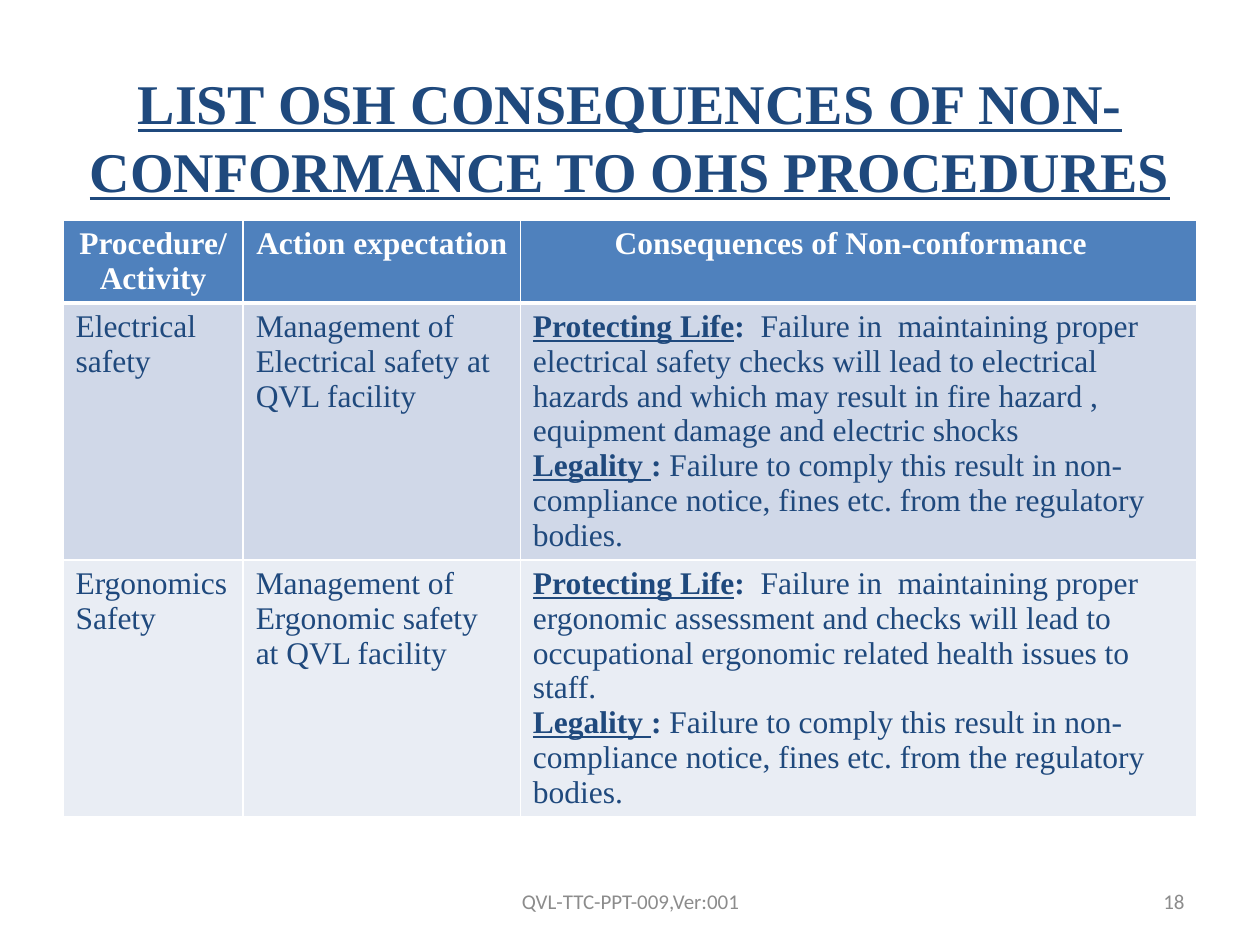
"""Build the slide on consequences of non-conformance to OHS procedures."""
from lxml.etree import SubElement
from pptx import Presentation
from pptx.dml.color import RGBColor
from pptx.enum.text import MSO_ANCHOR, MSO_AUTO_SIZE, PP_ALIGN
from pptx.oxml.ns import qn
from pptx.util import Inches, Pt

NAVY = RGBColor(0x1F, 0x49, 0x7D)
BLUE = RGBColor(0x4F, 0x81, 0xBD)
BANDS = [RGBColor(0xD0, 0xD8, 0xE8), RGBColor(0xE9, 0xED, 0xF4)]
WHITE = RGBColor(0xFF, 0xFF, 0xFF)
GREY = RGBColor(0x8C, 0x8C, 0x8C)
SERIF = "Times New Roman"

TITLE = "LIST OSH CONSEQUENCES OF NON-CONFORMANCE TO OHS PROCEDURES"
HEADERS = ["Procedure/Activity", "Action expectation ", "Consequences of Non-conformance  "]
LEGALITY = ("Legality ", "Failure to comply this result in non-compliance notice, "
            "fines etc. from the regulatory bodies.")
ROWS = [
    ("Electrical safety", "Management of Electrical safety at QVL facility",
     " Failure in  maintaining proper electrical safety checks will lead to electrical hazards "
     "and which may result in fire hazard , equipment damage and electric shocks"),
    ("Ergonomics Safety", "Management of Ergonomic safety at QVL facility",
     " Failure in  maintaining proper ergonomic assessment and checks will lead to "
     "occupational ergonomic related health issues to staff."),
]
COL_WIDTHS = [1.43, 2.2, 5.37]
ROW_HEIGHTS = [0.65, 2.04, 2.04]
FOOTERS = [
    ("18", 7.17, 2.33, PP_ALIGN.RIGHT),
    ("QVL-TTC-PPT-009,Ver:001", 3.42, 3.17, PP_ALIGN.CENTER),
]


def style(p, size, color, font=SERIF, bold=False, align=PP_ALIGN.LEFT):
    p.alignment = align
    p.font.name, p.font.size, p.font.bold = font, Pt(size), bold
    p.font.color.rgb = color


def add_runs(p, label, text):
    for part, bold, underline in ((label, True, True), (": ", True, False), (text, False, False)):
        r = p.add_run()
        r.text = part
        r.font.bold, r.font.underline = bold, underline


def format_cell(cell, fill, bottom):
    tcPr = cell._tc.get_or_add_tcPr()
    for side, width in (("L", 1), ("R", 1), ("T", 1), ("B", bottom)):
        ln = SubElement(tcPr, qn(f"a:ln{side}"), w=str(Pt(width)))
        SubElement(SubElement(ln, qn("a:solidFill")), qn("a:srgbClr"), val=str(WHITE))
    cell.fill.solid()
    cell.fill.fore_color.rgb = fill


def add_title(s):
    sp = s.shapes.title
    sp.left, sp.top, sp.width, sp.height = (Inches(v) for v in (0.5, 0.3, 9, 1.56))
    tf = sp.text_frame
    tf.text = TITLE
    tf.auto_size = MSO_AUTO_SIZE.NONE
    tf.vertical_anchor = MSO_ANCHOR.MIDDLE
    p = tf.paragraphs[0]
    style(p, 32, NAVY, bold=True, align=PP_ALIGN.CENTER)
    p.font.underline = True


def add_consequence_table(s):
    table = s.shapes.add_table(len(ROWS) + 1, len(HEADERS), Inches(0.5), Inches(1.75),
                               Inches(sum(COL_WIDTHS)), Inches(sum(ROW_HEIGHTS))).table
    for column, width in zip(table.columns, COL_WIDTHS):
        column.width = Inches(width)
    for row, height in zip(table.rows, ROW_HEIGHTS):
        row.height = Inches(height)
    for c, header in enumerate(HEADERS):
        cell = table.cell(0, c)
        cell.text = header
        style(cell.text_frame.paragraphs[0], 18, WHITE, bold=True, align=PP_ALIGN.CENTER)
        format_cell(cell, BLUE, 3)
    for i, (activity, action, danger) in enumerate(ROWS):
        cells = table.rows[i + 1].cells
        cells[0].text, cells[1].text = activity, action
        tf = cells[2].text_frame
        add_runs(tf.paragraphs[0], "Protecting Life", danger)
        add_runs(tf.add_paragraph(), *LEGALITY)
        for cell in cells:
            for p in cell.text_frame.paragraphs:
                style(p, 18, NAVY)
            format_cell(cell, BANDS[i % 2], 1)


def add_footer(s, text, left, width, align):
    tf = s.shapes.add_textbox(Inches(left), Inches(6.95), Inches(width), Inches(0.4)).text_frame
    tf.word_wrap = True
    tf.vertical_anchor = MSO_ANCHOR.MIDDLE
    tf.text = text
    style(tf.paragraphs[0], 12, GREY, font="Calibri", align=align)


def main():
    prs = Presentation()
    prs.slide_width, prs.slide_height = Inches(10), Inches(7.5)
    s = prs.slides.add_slide(prs.slide_layouts[5])
    add_title(s)
    add_consequence_table(s)
    for footer in FOOTERS:
        add_footer(s, *footer)
    prs.save("out.pptx")


if __name__ == "__main__":
    main()
